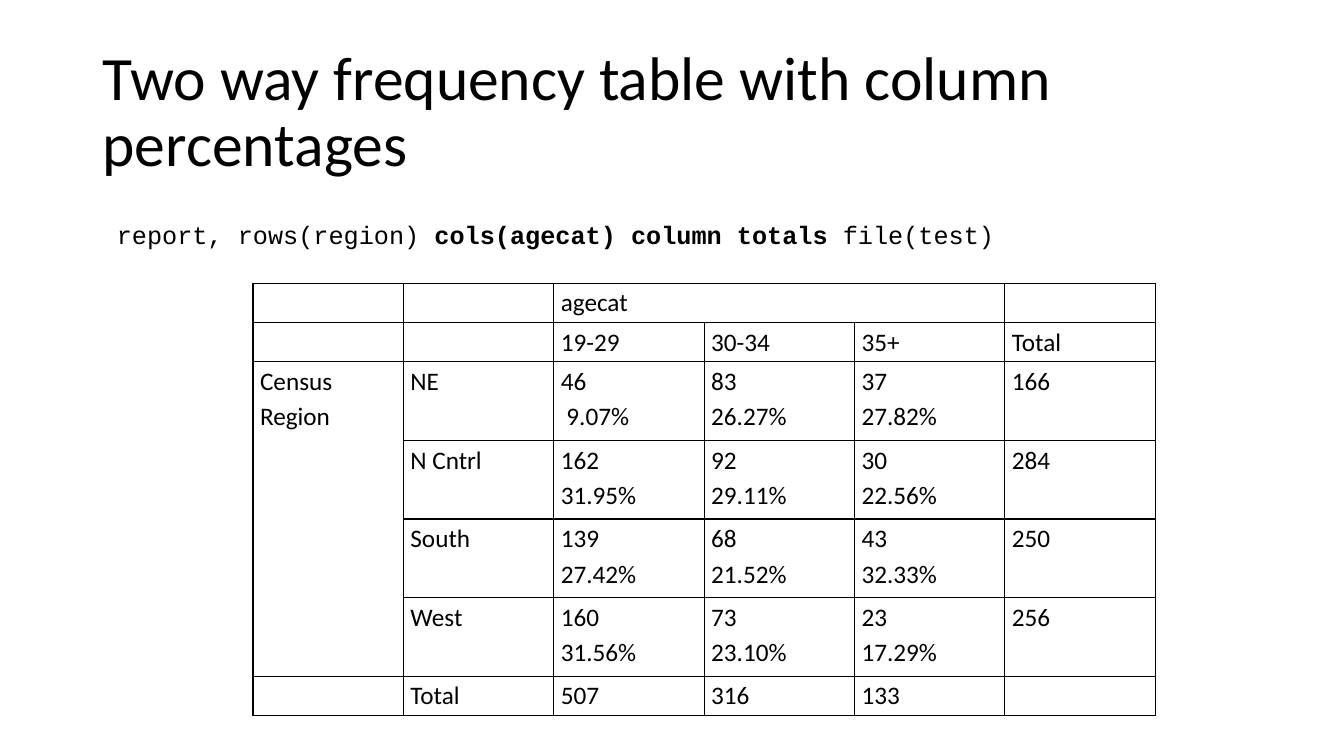
from dataclasses import dataclass

from lxml.etree import SubElement
from pptx import Presentation
from pptx.dml.color import RGBColor
from pptx.enum.text import MSO_ANCHOR as Anchor, MSO_AUTO_SIZE as AutoSize
from pptx.oxml.ns import qn
from pptx.util import Inches, Pt


@dataclass(frozen=True)
class Theme:
    ink: RGBColor = RGBColor(0, 0, 0)
    body_font: str = "Calibri"
    code_font: str = "Courier New"
    title_size: int = 44
    body_size: int = 18
    border_width: int = 1


THEME = Theme()

TITLE = "Two way frequency table with column percentages"
COMMAND = [
    ("report, rows(region) ", False),
    ("cols(agecat) column totals ", True),
    ("file(test)", False),
]
FREQUENCIES = [
    ["", "", "agecat", "", "", ""],
    ["", "", "19-29", "30-34", "35+", "Total"],
    ["Census Region", "NE", "46\n 9.07%", "83\n26.27%", "37\n27.82%", "166"],
    ["", "N Cntrl", "162\n31.95%", "92\n29.11%", "30\n22.56%", "284"],
    ["", "South", "139\n27.42%", "68\n21.52%", "43\n32.33%", "250"],
    ["", "West", "160\n31.56%", "73\n23.10%", "23\n17.29%", "256"],
    ["", "Total", "507", "316", "133", ""],
]
# Merged areas: first cell and last cell as (row, column)
MERGES = [((0, 2), (0, 4)), ((2, 0), (5, 0))]
ROW_HEIGHT = 0.39


def set_font(font, name, size):
    font.name = name
    font.size = Pt(size)
    font.color.rgb = THEME.ink


def add_title(s, text):
    box = s.shapes.add_textbox(Inches(0.92), Inches(0.4), Inches(11.5), Inches(1.45))
    tf = box.text_frame
    tf.word_wrap = True
    tf.vertical_anchor = Anchor.MIDDLE
    p = tf.paragraphs[0]
    p.text = text
    p.line_spacing = 0.9
    set_font(p.font, THEME.body_font, THEME.title_size)


def add_command(s, parts):
    box = s.shapes.add_textbox(Inches(1.06), Inches(2.13), Inches(8.95), Inches(0.4))
    tf = box.text_frame
    tf.word_wrap = False
    tf.auto_size = AutoSize.SHAPE_TO_FIT_TEXT
    p = tf.paragraphs[0]
    for text, bold in parts:
        r = p.add_run()
        r.text = text
        r.font.bold = bold
        set_font(r.font, THEME.code_font, THEME.body_size)


def add_borders(cell):
    tc_pr = cell._tc.get_or_add_tcPr()
    for side in ("a:lnL", "a:lnR", "a:lnT", "a:lnB"):
        ln = SubElement(tc_pr, qn(side), w=str(Pt(THEME.border_width)))
        fill = SubElement(ln, qn("a:solidFill"))
        SubElement(fill, qn("a:srgbClr"), val=str(THEME.ink))


def fill_cell(cell, text):
    cell.margin_left = cell.margin_right = Inches(0.07)
    cell.margin_top = cell.margin_bottom = 0
    p = cell.text_frame.paragraphs[0]
    p.text = text
    p.line_spacing = 1.15
    set_font(p.font, THEME.body_font, THEME.body_size)
    # Borders come before the fill in the cell properties
    add_borders(cell)
    cell.fill.background()


def add_frequency_table(s, rows, merges):
    frame = s.shapes.add_table(len(rows), len(rows[0]), Inches(2.51), Inches(2.81),
                               Inches(8.95), Inches(4.29))
    table = frame.table
    table.first_row = table.horz_banding = False
    for i, values in enumerate(rows):
        lines = 2 if any("\n" in value for value in values) else 1
        table.rows[i].height = Inches(ROW_HEIGHT * lines)
        for j, value in enumerate(values):
            fill_cell(table.cell(i, j), value)
    for first, last in merges:
        table.cell(*first).merge(table.cell(*last))


def main():
    prs = Presentation()
    prs.slide_width, prs.slide_height = Inches(13.33), Inches(7.5)
    s = prs.slides.add_slide(prs.slide_layouts[6])
    add_title(s, TITLE)
    add_frequency_table(s, FREQUENCIES, MERGES)
    add_command(s, COMMAND)
    prs.save("out.pptx")


if __name__ == "__main__":
    main()
